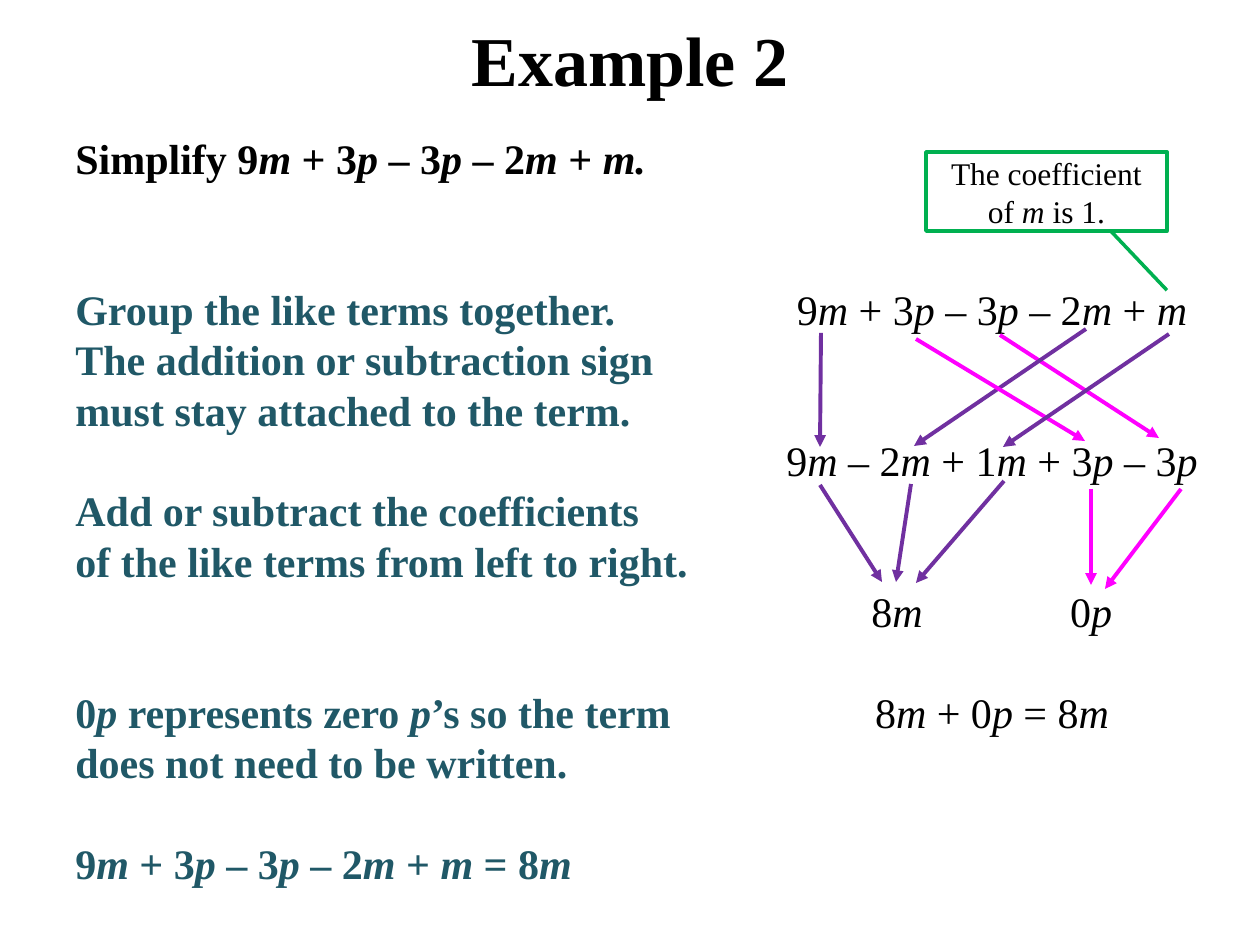
from dataclasses import dataclass

from lxml.etree import SubElement
from pptx import Presentation
from pptx.dml.color import RGBColor
from pptx.enum.shapes import MSO_CONNECTOR as Connector, MSO_SHAPE as Shape
from pptx.enum.text import MSO_ANCHOR as Anchor, PP_ALIGN as Align
from pptx.oxml.ns import qn
from pptx.util import Emu, Pt

EMU_PER_PX = 914400 / 126


def px(length):
    return Emu(round(length * EMU_PER_PX))


@dataclass(frozen=True)
class Theme:
    font: str = "Times New Roman"
    ink: str = "000000"
    paper: str = "FFFFFF"
    teal: str = "205867"
    purple: str = "7030A0"
    magenta: str = "FF00FF"
    green: str = "00B050"
    title_size: int = 40
    body_size: int = 24
    note_size: int = 18
    line_pitch: float = 28.8
    arrow_width: float = 2.25
    border_width: float = 2


class Board:
    def __init__(self, slide, theme):
        self.slide = slide
        self.theme = theme

    def typeset(self, paragraph, text, size, color=None, bold=False, align=Align.LEFT):
        paragraph.alignment = align
        font = paragraph.font
        font.name, font.size, font.bold = self.theme.font, Pt(size), bold
        font.color.rgb = RGBColor.from_string(color or self.theme.ink)
        for index, part in enumerate(text.split("*")):
            if part:
                run = paragraph.add_run()
                run.text = part
                if index % 2:
                    run.font.italic = True

    def text_frame(self, left, top, width, height, anchor=Anchor.TOP):
        frame = self.slide.shapes.add_textbox(*map(px, (left, top, width, height))).text_frame
        frame.word_wrap = True
        frame.vertical_anchor = anchor
        return frame

    def title(self, text, *box):
        frame = self.text_frame(*box, anchor=Anchor.MIDDLE)
        self.typeset(frame.paragraphs[0], text, self.theme.title_size, bold=True, align=Align.CENTER)

    def steps(self, lines, *box):
        frame = self.text_frame(*box)
        for index, (gap, color, text) in enumerate(lines):
            paragraph = frame.add_paragraph() if index else frame.paragraphs[0]
            paragraph.line_spacing = Pt(self.theme.line_pitch)
            paragraph.space_before = Pt(gap * self.theme.line_pitch)
            self.typeset(paragraph, text, self.theme.body_size, color, bold=True)

    def expression(self, text, center, top, width):
        frame = self.text_frame(center - width // 2, top, width, 63)
        paragraph = frame.paragraphs[0]
        paragraph.line_spacing = Pt(self.theme.line_pitch)
        self.typeset(paragraph, text, self.theme.body_size, align=Align.CENTER)

    def callout(self, text, pointer, *box):
        note = self.slide.shapes.add_shape(Shape.LINE_CALLOUT_1, *map(px, box))
        note.shadow.inherit = False
        for index, value in enumerate(pointer):
            note.adjustments[index] = value
        note.fill.solid()
        note.fill.fore_color.rgb = RGBColor.from_string(self.theme.paper)
        note.line.color.rgb = RGBColor.from_string(self.theme.green)
        note.line.width = Pt(self.theme.border_width)
        note.text_frame.word_wrap = True
        note.text_frame.vertical_anchor = Anchor.MIDDLE
        self.typeset(note.text_frame.paragraphs[0], text, self.theme.note_size, align=Align.CENTER)

    def arrow(self, color, *ends):
        arrow = self.slide.shapes.add_connector(Connector.STRAIGHT, *map(px, ends))
        arrow.line.color.rgb = RGBColor.from_string(color)
        arrow.line.width = Pt(self.theme.arrow_width)
        properties = arrow._element.spPr
        SubElement(properties.find(qn("a:ln")), qn("a:tailEnd"), type="triangle")
        SubElement(properties, qn("a:effectLst"))


def main():
    theme = Theme()
    deck = Presentation()
    deck.slide_width, deck.slide_height = px(1260), px(945)
    board = Board(deck.slides.add_slide(deck.slide_layouts[6]), theme)

    board.title("Example 2", 63, 0, 1134, 117)
    board.steps(
        [
            (0, theme.ink, "Simplify 9*m* + 3*p* – 3*p* – 2*m* + *m.*"),
            (2, theme.teal, "Group the like terms together."),
            (0, theme.teal, "The addition or subtraction sign"),
            (0, theme.teal, "must stay attached to the term."),
            (1, theme.teal, "Add or subtract the coefficients"),
            (0, theme.teal, "of the like terms from left to right."),
            (2, theme.teal, "0*p* represents zero *p*’s so the term"),
            (0, theme.teal, "does not need to be written."),
            (1, theme.teal, "9*m* + 3*p* – 3*p* – 2*m* + *m* = 8*m*"),
        ],
        63, 126, 1134, 781,
    )

    for text, center, top, width in (
        ("9*m* + 3*p* – 3*p* – 2*m* + *m*", 992, 277, 460),
        ("9*m* – 2*m* + 1*m* + 3*p* – 3*p*", 992, 428, 460),
        ("8*m*", 897, 579, 120),
        ("0*p*", 1091, 579, 120),
        ("8*m* + 0*p* = 8*m*", 992, 680, 460),
    ):
        board.expression(text, center, top, width)

    regrouping = (
        (theme.magenta, 1000, 335, 1159, 438),
        (theme.purple, 1086, 329, 914, 446),
        (theme.magenta, 916, 339, 1085, 441),
        (theme.purple, 821, 333, 820, 447),
        (theme.purple, 1169, 334, 1003, 447),
    )
    combining = (
        (theme.magenta, 1181, 489, 1105, 589),
        (theme.purple, 911, 484, 896, 582),
        (theme.magenta, 1091, 489, 1091, 585),
        (theme.purple, 820, 485, 882, 582),
        (theme.purple, 1004, 481, 916, 583),
    )
    for color, *ends in regrouping + combining:
        board.arrow(color, *ends)

    board.callout("The coefficient of *m* is 1.", (1.01, 0.77, 1.75, 1), 926, 152, 241, 79)
    deck.save("out.pptx")


if __name__ == "__main__":
    main()
